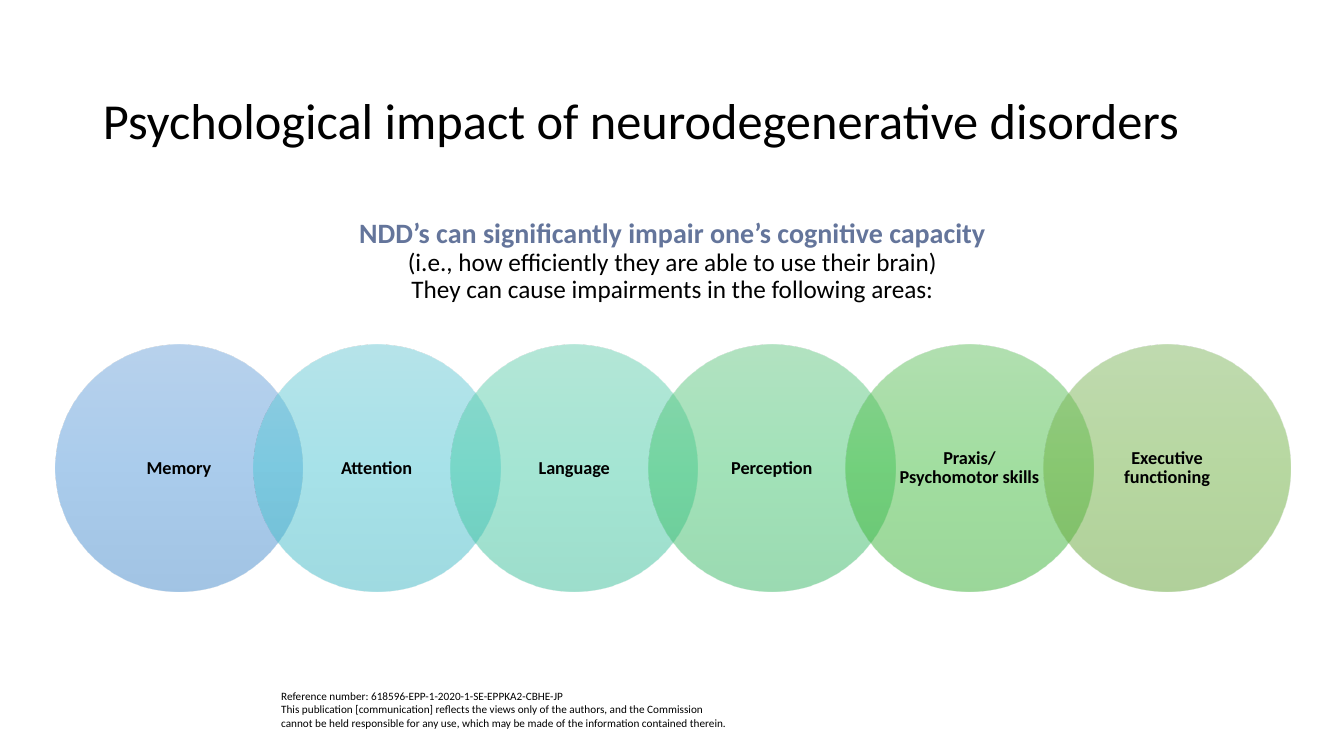
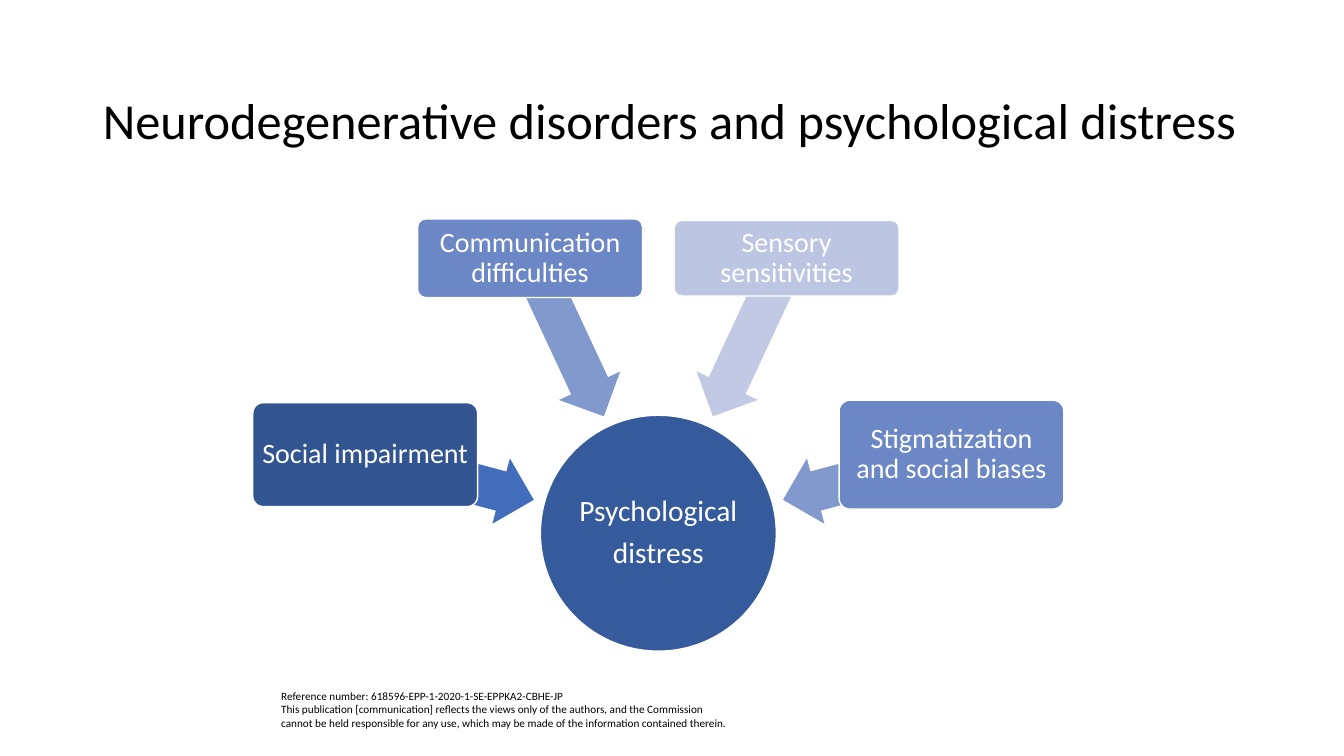
from dataclasses import dataclass
from math import cos, radians, sin

from pptx import Presentation
from pptx.dml.color import RGBColor
from pptx.enum.shapes import MSO_SHAPE as Shape
from pptx.enum.text import MSO_ANCHOR as Anchor, MSO_AUTO_SIZE as AutoSize, PP_ALIGN as Align
from pptx.oxml import parse_xml
from pptx.oxml.ns import nsdecls
from pptx.util import Inches, Pt


@dataclass(frozen=True)
class Theme:
    font: str = "Calibri"
    black: str = "000000"
    white: str = "FFFFFF"
    accent: str = "64759B"
    hub: str = "365B9D"
    title: int = 36
    lead: int = 20
    detail: int = 18
    area: int = 13
    hub_text: int = 21
    factor: int = 20
    footer: int = 8


T = Theme()

IMPACT_TITLE = "Psychological impact of neurodegenerative disorders"
DISTRESS_TITLE = "Neurodegenerative disorders and psychological distress"
FOOTER = [
    "Reference number: 618596-EPP-1-2020-1-SE-EPPKA2-CBHE-JP\v"
    "This publication [communication] reflects the views only of the authors, and the Commission "
    "cannot be held responsible for any use, which may be made of the information contained therein."
]
INTRO = [
    "NDD’s can significantly impair one’s cognitive capacity",
    "(i.e., how efficiently they are able to use their brain)",
    "They can cause impairments in the following areas:",
]
AREAS = [
    (["Memory"], ("71A6DB", "559BDB", "448ACA")),
    (["Attention"], ("6DCAD5", "4FC7D5", "3FB7C4")),
    (["Language"], ("69CFB1", "4ACEAA", "3BBE9A")),
    (["Perception"], ("66C885", "45C772", "37B764")),
    (["Praxis/", "Psychomotor skills"], ("64C162", "44BF41", "37B034")),
    (["Executive functioning"], ("81B861", "6FB242", "62A336")),
]
HUB = ["Psychological", "distress"]
FACTORS = [
    ("Social impairment", 1.03, "325491", "416DBB"),
    ("Communication difficulties", 0.78, "6C87C5", "8299CE"),
    ("Sensory sensitivities", 0.75, "BCC6E2", "C1C9E4"),
    ("Stigmatization and social biases", 1.08, "6C87C5", "8299CE"),
]

TITLE_BOX = (0.92, 0.74, 11.5, 0.96)
INTRO_BOX = (0.92, 2.12, 11.5, 0.96)
FOOTER_BOX = (2.69, 6.79, 4.64, 0.5)
AREA_LEFT, AREA_TOP, AREA_SIZE, AREA_STEP = 0.55, 3.42, 2.45, 0.8
HUB_X, HUB_Y, HUB_SIZE = 6.53, 5.29, 2.34
FIRST_ANGLE, ANGLE_STEP = 195, 50
ARROW_RADIUS, ARROW_W, ARROW_H = 2.15, 1.74, 0.67
FACTOR_RADIUS, FACTOR_W = 3.01, 2.23


def inches(box):
    return [Inches(v) for v in box]


def centred(x, y, w, h):
    return x - w / 2, y - h / 2, w, h


def write(tf, lines, size, color=T.black, bold=False, align=Align.CENTER,
          anchor=Anchor.MIDDLE, spacing=0.9, gap=0, inset=None):
    tf.word_wrap = True
    tf.auto_size = AutoSize.NONE
    tf.vertical_anchor = anchor
    if inset:
        tf.margin_left = tf.margin_right = Inches(inset[0])
        tf.margin_top = tf.margin_bottom = Inches(inset[1])
    for i, line in enumerate(lines):
        p = tf.add_paragraph() if i else tf.paragraphs[0]
        p.text = line
        p.alignment = align
        p.line_spacing = spacing
        p.space_before = Pt(0)
        p.space_after = Pt(gap)
        p.font.name = T.font
        p.font.size = Pt(size)
        p.font.bold = bold
        p.font.color.rgb = RGBColor.from_string(color)


def add_shape(s, kind, box, fill=None, line=None):
    sp = s.shapes.add_shape(kind, *inches(box))
    sp.shadow.inherit = False
    if fill:
        sp.fill.solid()
        sp.fill.fore_color.rgb = RGBColor.from_string(fill)
    if line:
        sp.line.color.rgb = RGBColor.from_string(line)
        sp.line.width = Pt(1)
    else:
        sp.line.fill.background()
    return sp


def fade(sp, colors):
    stops = "".join(
        f'<a:gs pos="{i * 50000}"><a:srgbClr val="{c}"><a:alpha val="50000"/></a:srgbClr></a:gs>'
        for i, c in enumerate(colors))
    sp._element.spPr.prstGeom.addnext(parse_xml(
        f'<a:gradFill {nsdecls("a")} rotWithShape="1"><a:gsLst>{stops}</a:gsLst>'
        '<a:lin ang="5400000" scaled="0"/></a:gradFill>'))


def add_slide(prs, title):
    s = prs.slides.add_slide(prs.slide_layouts[5])
    sp = s.shapes.title
    sp.left, sp.top, sp.width, sp.height = inches(TITLE_BOX)
    write(sp.text_frame, [title], T.title, align=Align.LEFT)
    footer = s.shapes.add_textbox(*inches(FOOTER_BOX))
    write(footer.text_frame, FOOTER, T.footer, align=Align.LEFT, anchor=Anchor.TOP, spacing=1.0)
    return s


def build_impact(prs):
    s = add_slide(prs, IMPACT_TITLE)
    for i, (lines, colors) in enumerate(AREAS):
        left = AREA_LEFT + i * AREA_SIZE * AREA_STEP
        sp = add_shape(s, Shape.OVAL, (left, AREA_TOP, AREA_SIZE, AREA_SIZE))
        fade(sp, colors)
        write(sp.text_frame, lines, T.area, bold=True, inset=(0.13, 0.02))
    tf = s.shapes.add_textbox(*inches(INTRO_BOX)).text_frame
    write(tf, INTRO, T.detail)
    lead = tf.paragraphs[0].font
    lead.size, lead.bold = Pt(T.lead), True
    lead.color.rgb = RGBColor.from_string(T.accent)


def build_distress(prs):
    s = add_slide(prs, DISTRESS_TITLE)
    hub = add_shape(s, Shape.OVAL, centred(HUB_X, HUB_Y, HUB_SIZE, HUB_SIZE), T.hub, T.white)
    write(hub.text_frame, HUB, T.hub_text, T.white, gap=7, inset=(0.01, 0.01))
    for i, (label, height, fill, arrow_fill) in enumerate(FACTORS):
        angle = FIRST_ANGLE + i * ANGLE_STEP
        dx, dy = cos(radians(angle)), sin(radians(angle))
        arrow = add_shape(s, Shape.LEFT_ARROW, centred(
            HUB_X + ARROW_RADIUS * dx, HUB_Y + ARROW_RADIUS * dy, ARROW_W, ARROW_H), arrow_fill)
        arrow.rotation = angle
        arrow.adjustments[0], arrow.adjustments[1] = 0.6, 0.5
        box = add_shape(s, Shape.ROUNDED_RECTANGLE, centred(
            HUB_X + FACTOR_RADIUS * dx, HUB_Y + FACTOR_RADIUS * dy, FACTOR_W, height), fill, T.white)
        box.adjustments[0] = 0.1
        write(box.text_frame, [label], T.factor, T.white, inset=(0.04, 0.04))


def main():
    prs = Presentation()
    prs.slide_width, prs.slide_height = Inches(13.33), Inches(7.5)
    build_impact(prs)
    build_distress(prs)
    prs.save("out.pptx")


if __name__ == "__main__":
    main()
